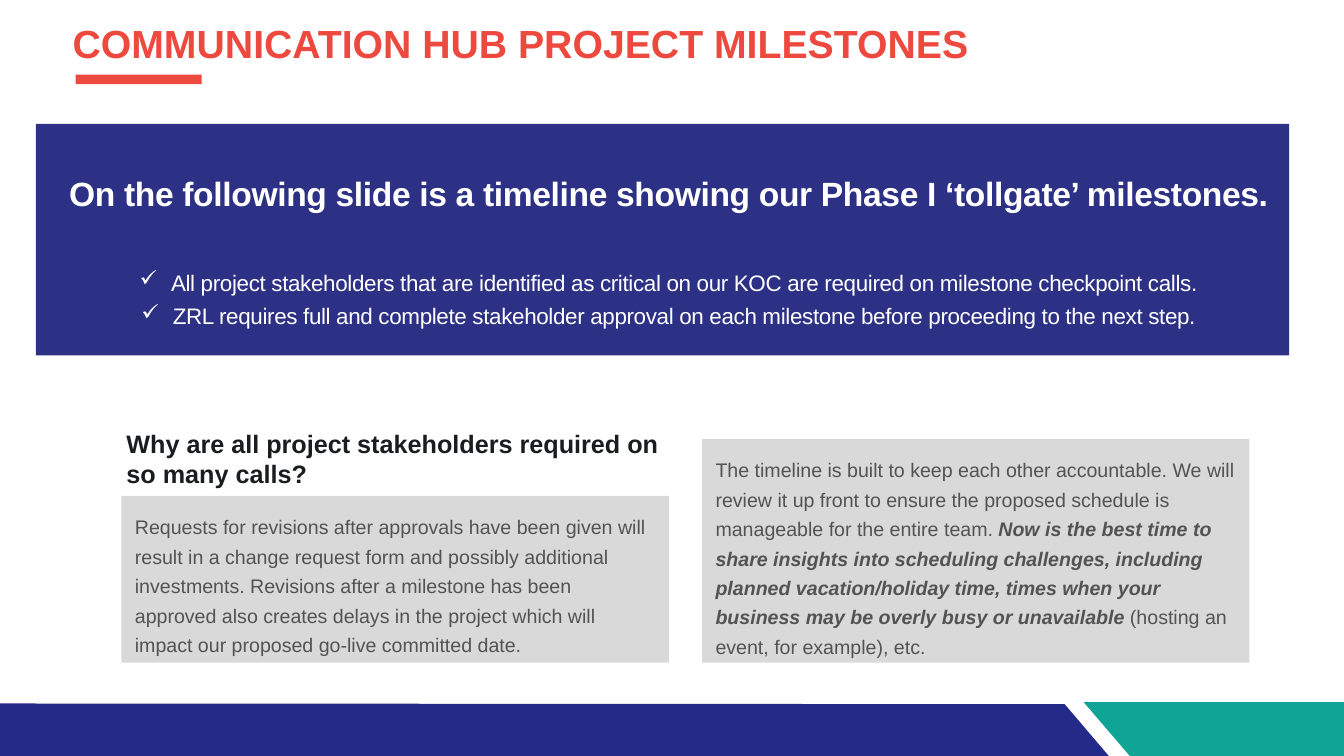
"""Build the project milestones slide."""
import pptx
import pptx.util
import pptx.dml.color
import pptx.enum.shapes
import pptx.enum.text
import pptx.oxml.ns
from lxml import etree

Pt = pptx.util.Pt
RGB = pptx.dml.color.RGBColor
RED = RGB(0xED, 0x49, 0x3F)
NAVY = RGB(0x2D, 0x31, 0x85)
BLUE = RGB(0x24, 0x2A, 0x88)
TEAL = RGB(0x10, 0xA4, 0x96)
PALE = RGB(0xD9, 0xD9, 0xD9)
GRAY = RGB(0x53, 0x53, 0x53)
DARK = RGB(0x19, 0x1D, 0x20)
WHITE = RGB(0xFF, 0xFF, 0xFF)

WIDE, HIGH = 1920, 1080
LEAD = 1.25
CARD = 782
BASE = 946.8
LEFT, RIGHT = 173.5, 1003

FOOT = [
    (BLUE, [(0, 1005), (1521.4, 1006.5), (1584, HIGH), (0, HIGH)]),
    (TEAL, [(1548, 1003), (WIDE, 1003), (WIDE, HIGH), (1613.5, HIGH)]),
]
BARS = [
    (RED, (108, 106.5, 180, 13.7)),
    (NAVY, (51.1, 177.1, 1790.6, 330.5)),
]
TITLE = "COMMUNICATION HUB PROJECT MILESTONES"
HEAD = "On the following slide is a timeline showing our Phase I ‘tollgate’ milestones."
RULES = [
    "All project stakeholders that are identified as critical on our KOC are required on milestone checkpoint calls.",
    "ZRL requires full and complete stakeholder approval on each milestone before proceeding to the next step.",
]
ASK = "Why are all project stakeholders required on so many calls?"
CARDS = [
    (LEFT, 708.5, [
        ("Requests for revisions after approvals have been given will result in a change request form and possibly additional investments. Revisions after a milestone has been approved also creates delays in the project which will impact our proposed go-live committed date.", {}),
    ]),
    (RIGHT, 627.1, [
        ("The timeline is built to keep each other accountable. We will review it up front to ensure the proposed schedule is manageable for the entire team. ", {}),
        ("Now is the best time to share insights into scheduling challenges, including planned vacation/holiday time, times when your business may be overly busy or unavailable", {"bold": True, "italic": True}),
        (" (hosting an event, for example), etc.", {}),
    ]),
]


def assign(item, **vals):
    for key, val in vals.items():
        setattr(item, key, val)


def paint(shape, color):
    shape.shadow.inherit = False
    shape.fill.solid()
    shape.fill.fore_color.rgb = color
    shape.line.fill.background()


def block(shapes, color, box):
    kind = pptx.enum.shapes.MSO_SHAPE.RECTANGLE
    shape = shapes.add_shape(kind, *map(Pt, box))
    paint(shape, color)
    return shape


def write(para, runs, size, color, space=0, **form):
    for text, extra in runs:
        run = para.add_run()
        run.text = text
        assign(run.font, name="Arial", size=Pt(size), **{**form, **extra})
        run.font.color.rgb = color
        if space:
            run.font._element.set("spc", str(space))


def textbox(shapes, box):
    frame = shapes.add_textbox(*map(Pt, box)).text_frame
    frame.word_wrap = True
    return frame


def bullet(para, mark, gap):
    props = para._p.get_or_add_pPr()
    props.set("marL", str(Pt(gap)))
    props.set("indent", str(-Pt(gap)))
    etree.SubElement(props, pptx.oxml.ns.qn("a:buChar")).set("char", mark)


def main():
    deck = pptx.Presentation()
    assign(deck, slide_width=Pt(WIDE), slide_height=Pt(HIGH))
    shapes = deck.slides.add_slide(deck.slide_layouts[6]).shapes
    align = pptx.enum.text.PP_ALIGN
    grow = pptx.enum.text.MSO_AUTO_SIZE.SHAPE_TO_FIT_TEXT

    for color, dots in FOOT:
        path = shapes.build_freeform(*dots[0], scale=float(Pt(1)))
        path.add_line_segments(dots[1:], close=True)
        paint(path.convert_to_shape(), color)
    for color, box in BARS:
        block(shapes, color, box)

    labels = [
        (TITLE, (96.5, 23.8, 1776, 75), 56, RED),
        (ASK, (LEFT, 607.7, CARD, 94.3), 36, DARK),
    ]
    for text, box, size, color in labels:
        frame = textbox(shapes, box)
        frame.auto_size = grow
        write(frame.paragraphs[0], [(text, {})], size, color, bold=True)

    frame = textbox(shapes, (59.8, 229.7, 1790.6, 84.2))
    para = frame.paragraphs[0]
    assign(para, alignment=align.CENTER, line_spacing=LEAD, space_after=Pt(69))
    write(para, [(HEAD, {})], 48, WHITE, -50, bold=True)
    for text in RULES:
        para = frame.add_paragraph()
        assign(para, alignment=align.CENTER, line_spacing=LEAD)
        bullet(para, "✓", 45)
        write(para, [(text, {})], 32, WHITE, -50)

    for left, top, runs in CARDS:
        frame = block(shapes, PALE, (left, top, CARD, BASE - top)).text_frame
        sides = ("left", "top", "right", "bottom")
        assign(frame, word_wrap=True, auto_size=grow,
               vertical_anchor=pptx.enum.text.MSO_ANCHOR.TOP,
               **{"margin_" + side: Pt(19.2) for side in sides})
        para = frame.paragraphs[0]
        assign(para, alignment=align.LEFT, line_spacing=LEAD)
        write(para, runs, 28, GRAY)

    deck.save("out.pptx")


if __name__ == "__main__":
    main()
